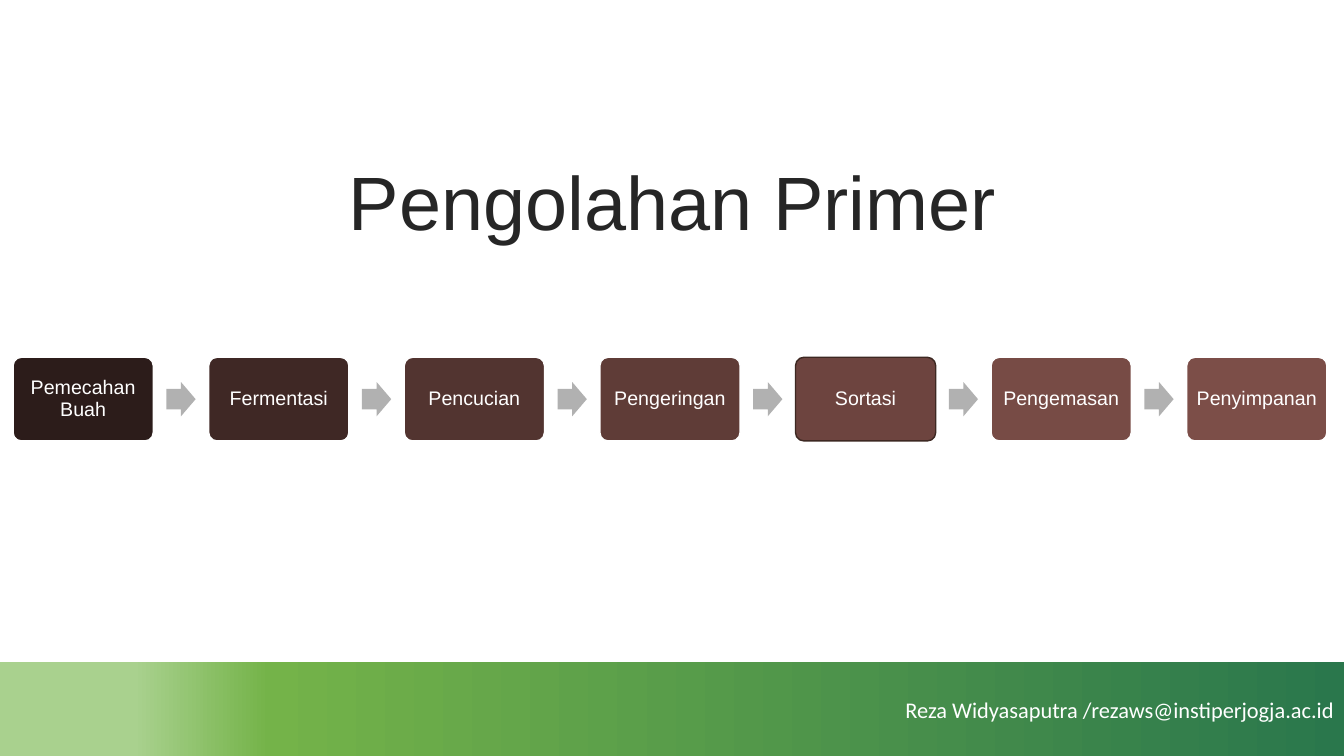
from copy import deepcopy

from pptx import Presentation
from pptx.dml.color import RGBColor
from pptx.enum.shapes import MSO_SHAPE
from pptx.enum.text import MSO_ANCHOR, PP_ALIGN
from pptx.util import Inches, Pt

WHITE = RGBColor(0xFF, 0xFF, 0xFF)
TITLE_INK = RGBColor(0x26, 0x26, 0x26)
ARROW_GREY = RGBColor(0xB1, 0xB1, 0xB1)
SORTING_EDGE = RGBColor(0x3D, 0x28, 0x22)
FOOTER_STOPS = [
    (0, RGBColor(0x2A, 0x77, 0x4C)),
    (0.8, RGBColor(0x74, 0xB3, 0x49)),
    (0.9, RGBColor(0xA9, 0xD1, 0x8E)),
]
STEPS = [
    ("Pemecahan Buah", RGBColor(0x2C, 0x1C, 0x1A), WHITE),
    ("Fermentasi", RGBColor(0x3F, 0x28, 0x25), WHITE),
    ("Pencucian", RGBColor(0x52, 0x34, 0x30), WHITE),
    ("Pengeringan", RGBColor(0x5F, 0x3C, 0x37), WHITE),
    ("Sortasi", RGBColor(0x6D, 0x44, 0x3F), SORTING_EDGE),
    ("Pengemasan", RGBColor(0x77, 0x4B, 0x45), WHITE),
    ("Penyimpanan", RGBColor(0x7C, 0x4E, 0x48), WHITE),
]

SLIDE_WIDTH, SLIDE_HEIGHT = 13.33, 7.5
FIRST_COLUMN, COLUMN_PITCH = 0.13, 1.94
STEP_WIDTH, STEP_HEIGHT = 1.39, 0.83
ARROW_WIDTH, ARROW_HEIGHT = 0.29, 0.34
ROW_MIDDLE = 3.96
FOOTER_HEIGHT = 0.93


def write_text(shape, text, size, font_name, color, align, spacing=1.0):
    frame = shape.text_frame
    frame.word_wrap = True
    frame.vertical_anchor = MSO_ANCHOR.MIDDLE
    para = frame.paragraphs[0]
    para.alignment = align
    para.line_spacing = spacing
    span = para.add_run()
    span.text = text
    span.font.size = Pt(size)
    span.font.name = font_name
    span.font.color.rgb = color


def add_plain_shape(page, kind, left, top, width, height):
    shape = page.shapes.add_shape(
        kind, Inches(left), Inches(top), Inches(width), Inches(height))
    shape.shadow.inherit = False
    shape.line.fill.background()
    return shape


def add_title(page, text):
    box = page.shapes.add_textbox(
        Inches(0.34), Inches(1.65), Inches(12.66), Inches(0.79))
    write_text(box, text, 54, "Arial", TITLE_INK, PP_ALIGN.CENTER, 0.9)


def add_step(page, left, text, color, edge):
    box = add_plain_shape(page, MSO_SHAPE.ROUNDED_RECTANGLE, left,
                          ROW_MIDDLE - STEP_HEIGHT / 2, STEP_WIDTH, STEP_HEIGHT)
    box.adjustments[0] = 0.1
    box.fill.solid()
    box.fill.fore_color.rgb = color
    box.line.color.rgb = edge
    box.line.width = Pt(1)
    frame = box.text_frame
    frame.margin_left = frame.margin_right = Inches(0.06)
    frame.margin_top = frame.margin_bottom = Inches(0.06)
    write_text(box, text, 14, "Arial", WHITE, PP_ALIGN.CENTER, 0.9)


def add_arrow(page, left):
    arrow = add_plain_shape(page, MSO_SHAPE.RIGHT_ARROW, left,
                            ROW_MIDDLE - ARROW_HEIGHT / 2, ARROW_WIDTH, ARROW_HEIGHT)
    arrow.adjustments[0] = 0.6
    arrow.adjustments[1] = 0.5
    arrow.fill.solid()
    arrow.fill.fore_color.rgb = ARROW_GREY


def add_footer(page, text):
    band = add_plain_shape(page, MSO_SHAPE.RECTANGLE, 0,
                           SLIDE_HEIGHT - FOOTER_HEIGHT, SLIDE_WIDTH, FOOTER_HEIGHT)
    band.fill.gradient()
    band.fill.gradient_angle = 180
    stop_list = band._element.spPr.gradFill.gsLst
    stop_list.append(deepcopy(stop_list[-1]))
    for stop, (position, color) in zip(band.fill.gradient_stops, FOOTER_STOPS):
        stop.position = position
        stop.color.rgb = color
    write_text(band, text, 16, "Calibri", WHITE, PP_ALIGN.RIGHT)


def main():
    deck = Presentation()
    deck.slide_width = Inches(SLIDE_WIDTH)
    deck.slide_height = Inches(SLIDE_HEIGHT)
    page = deck.slides.add_slide(deck.slide_layouts[6])
    add_title(page, "Pengolahan Primer")
    gap = COLUMN_PITCH - STEP_WIDTH
    for column, (text, color, edge) in enumerate(STEPS):
        left = FIRST_COLUMN + column * COLUMN_PITCH
        if column > 0:
            add_arrow(page, left - (gap + ARROW_WIDTH) / 2)
        add_step(page, left, text, color, edge)
    add_footer(page, "Reza Widyasaputra /rezaws@instiperjogja.ac.id")
    deck.save("out.pptx")


if __name__ == "__main__":
    main()
